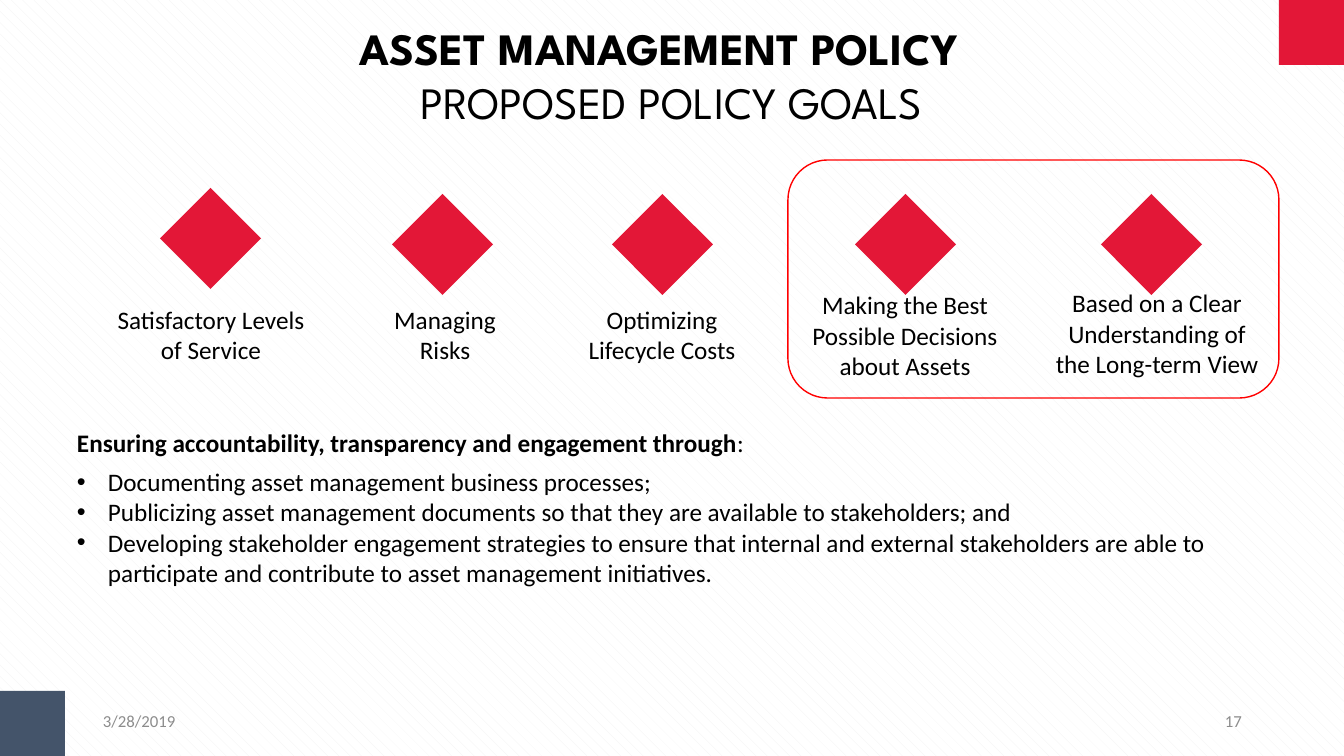
import pptx
import pptx.util
import pptx.dml.color
import pptx.enum.dml
import pptx.enum.shapes
import pptx.enum.text
import pptx.oxml.ns
import lxml.etree

RGBColor = pptx.dml.color.RGBColor
SHAPE = pptx.enum.shapes.MSO_SHAPE
ALIGN = pptx.enum.text.PP_ALIGN

RED = RGBColor(0xE3, 0x17, 0x37)
FRAME = RGBColor(0xFF, 0x00, 0x00)
SLATE = RGBColor(0x44, 0x54, 0x6A)
BLACK = RGBColor(0x00, 0x00, 0x00)
GREY = RGBColor(0x8C, 0x8C, 0x8C)
WHITE = RGBColor(0xFF, 0xFF, 0xFF)
PALE = RGBColor(0xF2, 0xF2, 0xF2)

WIDTH, HEIGHT = 1344, 756
SCALE = 12192000 / WIDTH
CORNER = 65
GEM = 101
HANG = 31

# Gem left and top, label box, label paragraphs
GOALS = [
    ((160, 188), (113, 304, 196, 61), ["Satisfactory Levels of Service"]),
    ((392, 194), (347, 304, 196, 61), ["Managing", "Risks"]),
    ((612, 194), (564, 304, 196, 61), ["Optimizing Lifecycle Costs"]),
    ((855, 194), (807, 289, 196, 92),
     ["Making the Best Possible Decisions about Assets"]),
    ((1101, 194), (1053, 287, 208, 92),
     ["Based on a Clear Understanding of the Long-term View"]),
]
MEANS = [
    "Documenting asset management business processes;",
    "Publicizing asset management documents so that they are available to "
    "stakeholders; and",
    "Developing stakeholder engagement strategies to ensure that internal and "
    "external stakeholders are able to participate and contribute to asset "
    "management initiatives.",
]


def px(count):
    return pptx.util.Emu(round(count * SCALE))


def add_shape(slide, kind, box, fill=None, line=None):
    shape = slide.shapes.add_shape(kind, *map(px, box))
    shape.shadow.inherit = False
    if fill is None:
        shape.fill.background()
    else:
        shape.fill.solid()
        shape.fill.fore_color.rgb = fill
    if line is None:
        shape.line.fill.background()
    else:
        shape.line.color.rgb = line
        shape.line.width = pptx.util.Pt(1)


def set_frame(frame, side=0, edge=0):
    frame.word_wrap = True
    frame.auto_size = pptx.enum.text.MSO_AUTO_SIZE.NONE
    frame.vertical_anchor = pptx.enum.text.MSO_ANCHOR.MIDDLE
    frame.margin_left = frame.margin_right = px(side)
    frame.margin_top = frame.margin_bottom = px(edge)


def add_box(slide, box, side=0, edge=0):
    frame = slide.shapes.add_textbox(*map(px, box)).text_frame
    set_frame(frame, side, edge)
    return frame


def add_run(para, text, size=18, color=BLACK, bold=False, face="Calibri"):
    run = para.add_run()
    run.text = text
    run.font.name = face
    run.font.size = pptx.util.Pt(size)
    run.font.bold = bold
    run.font.color.rgb = color


def add_bullet(para):
    props = para._p.get_or_add_pPr()
    props.set("marL", str(px(HANG)))
    props.set("indent", str(-px(HANG)))
    qn = pptx.oxml.ns.qn
    lxml.etree.SubElement(props, qn("a:buFont")).set("typeface", "Arial")
    lxml.etree.SubElement(props, qn("a:buChar")).set("char", "•")


def add_title(slide):
    title = slide.shapes.title
    title.left, title.top, title.width, title.height = map(
        px, (161, 20, 1021, 109))
    frame = title.text_frame
    set_frame(frame)
    lines = [("ASSET MANAGEMENT POLICY  ", True),
             ("PROPOSED POLICY GOALS", False)]
    for i, (text, bold) in enumerate(lines):
        para = frame.add_paragraph() if i else frame.paragraphs[0]
        para.alignment = ALIGN.CENTER
        add_run(para, text, 32, bold=bold, face="League Spartan")


def add_goal(slide, spot, box, lines):
    add_shape(slide, SHAPE.DIAMOND, (*spot, GEM, GEM), RED)
    frame = add_box(slide, box)
    for i, text in enumerate(lines):
        para = frame.add_paragraph() if i else frame.paragraphs[0]
        para.alignment = ALIGN.CENTER
        add_run(para, text)


def add_means(slide):
    frame = add_box(slide, (77, 427, 1141, 161))
    head = frame.paragraphs[0]
    head.space_after = pptx.util.Pt(6)
    add_run(head, "Ensuring accountability, transparency and engagement through",
            bold=True)
    add_run(head, ":")
    for text in MEANS:
        para = frame.add_paragraph()
        add_bullet(para)
        add_run(para, text)


def add_foot(slide, left, text, align):
    para = add_box(slide, (left, 701, 302, 40), 10, 5).paragraphs[0]
    para.alignment = align
    add_run(para, text, 12, GREY)


def main():
    deck = pptx.Presentation()
    deck.slide_width, deck.slide_height = px(WIDTH), px(HEIGHT)
    slide = deck.slides.add_slide(deck.slide_layouts.get_by_name("Title Only"))

    # Background
    fill = slide.background.fill
    fill.patterned()
    fill.pattern = pptx.enum.dml.MSO_PATTERN.SHINGLE
    fill.fore_color.rgb = PALE
    fill.back_color.rgb = WHITE

    # Corner blocks and title
    add_shape(slide, SHAPE.RECTANGLE,
              (WIDTH - CORNER, 0, CORNER, CORNER), RED)
    add_shape(slide, SHAPE.RECTANGLE,
              (0, HEIGHT - CORNER, CORNER, CORNER), SLATE)
    add_title(slide)

    # Goals, with the last two framed
    for spot, box, lines in GOALS:
        add_goal(slide, spot, box, lines)
    add_shape(slide, SHAPE.ROUNDED_RECTANGLE, (788, 160, 491, 238), line=FRAME)

    # Accountability list and footer
    add_means(slide)
    add_foot(slide, 93, "3/28/2019", ALIGN.LEFT)
    add_foot(slide, 950, "17", ALIGN.RIGHT)

    deck.save("out.pptx")


if __name__ == "__main__":
    main()
